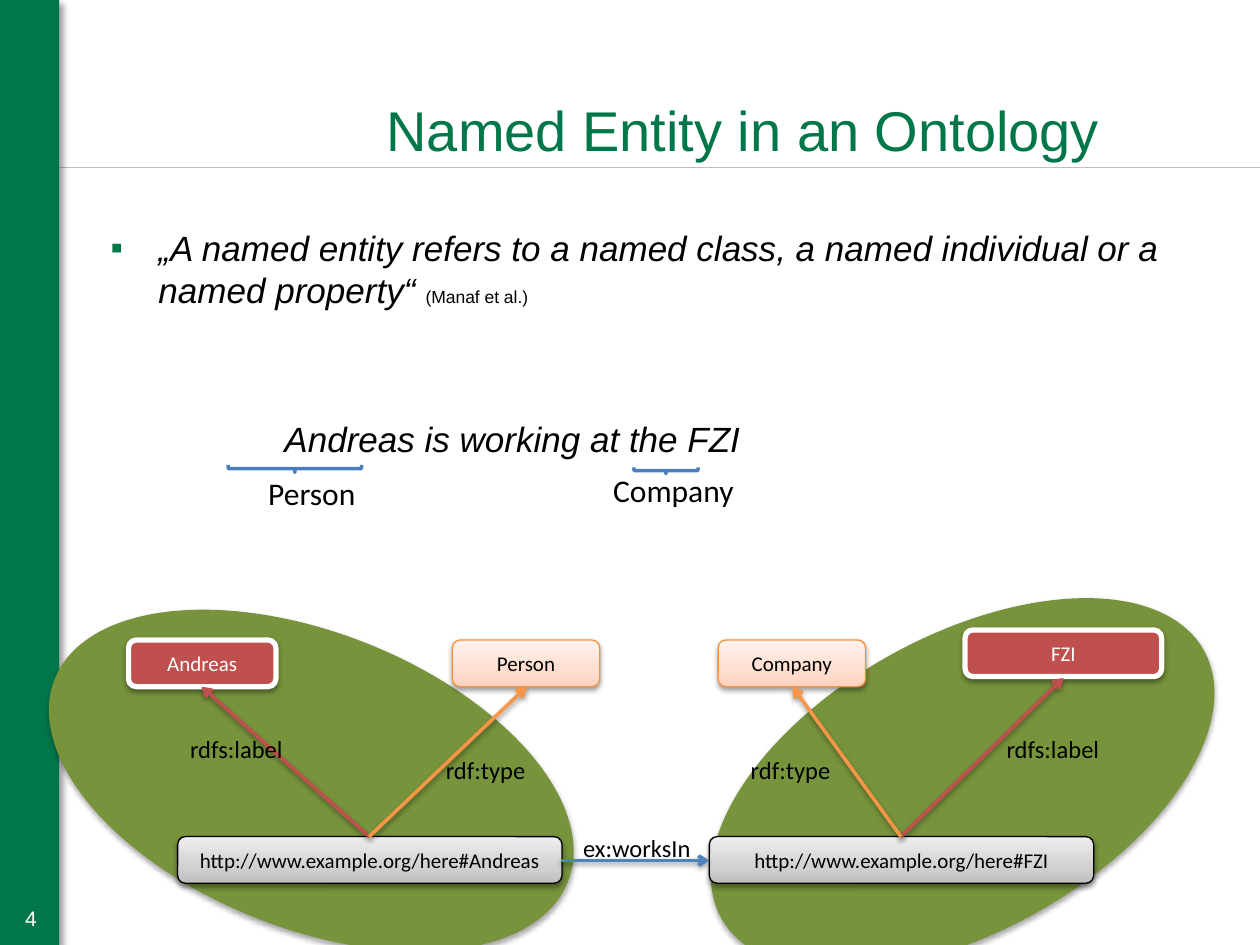
from copy import deepcopy
from lxml import etree
from pptx import Presentation, util as u
from pptx.dml.color import RGBColor
from pptx.enum import shapes as s, text as t
from pptx.oxml import ns

Inches, Pt = u.Inches, u.Pt
HUES = {"green": "007749", "olive": "77933C", "red": "C0504D", "amber": "F79646",
        "rim": "F69240", "blue": "4F81BD", "brace": "4B7EBC", "rule": "BFBFBF",
        "black": "000000", "white": "FFFFFF"}
GREY = ["BDBDBD", "D1D1D1", "EEEEEE"]
PEACH = ["FFD2BD", "FFDED0", "FFF2ED"]
SOFT = (38, 3.1, 1.6, 90)  # shadow: opacity %, blur pt, distance pt, angle
WIDE = (35, 3.1, 1.8, 90)

deck = Presentation()
deck.slide_width, deck.slide_height = Inches(10), Inches(7.5)
page = deck.slides.add_slide(deck.slide_layouts[6])
parts = page.shapes
RECT, ROUND = s.MSO_SHAPE.RECTANGLE, s.MSO_SHAPE.ROUNDED_RECTANGLE


def write(box, words, size, hue="black", face="Calibri", side="CENTER", anchor="MIDDLE", wrap=True):
    frame = box.text_frame
    for key, val in {"word_wrap": wrap, "vertical_anchor": t.MSO_ANCHOR[anchor]}.items():
        setattr(frame, key, val)
    para = frame.paragraphs[0]
    para.text, para.alignment = words, t.PP_ALIGN[side]
    for key, val in {"size": Pt(size), "name": face}.items():
        setattr(para.font, key, val)
    para.font.color.rgb = RGBColor.from_string(HUES[hue])


def dress(item, fill=None, line=None, width=0.75, glow=None, head=False):
    props = item._element.spPr
    if isinstance(fill, list):
        item.fill.gradient()
        stops = props.find(".//" + ns.qn("a:gsLst"))
        stops.insert(1, deepcopy(stops[0]))
        item.fill.gradient_angle = 90
        for stop, hue, place in zip(item.fill.gradient_stops, fill, (0, 0.35, 1)):
            stop.color.rgb, stop.position = RGBColor.from_string(hue), place
    elif fill:
        item.fill.solid()
        item.fill.fore_color.rgb = RGBColor.from_string(HUES[fill])
    elif hasattr(item, "fill"):
        item.fill.background()
    if line:
        item.line.color.rgb = RGBColor.from_string(HUES[line])
        item.line.width = Pt(width)
    else:
        item.line.fill.background()
    if head:
        etree.SubElement(item.line._get_or_add_ln(), ns.qn("a:tailEnd"), type="arrow")
    effect = etree.SubElement(props, ns.qn("a:effectLst"))
    if glow:
        alpha, blur, far, turn = glow
        shade = etree.SubElement(effect, ns.qn("a:outerShdw"), blurRad=str(Pt(blur)),
                                 dist=str(Pt(far)), dir=str(turn * 60000), rotWithShape="0")
        tone = etree.SubElement(shade, ns.qn("a:srgbClr"), val=HUES["black"])
        etree.SubElement(tone, ns.qn("a:alpha"), val=str(alpha * 1000))


# Title rule and side bar
rule = parts.add_connector(s.MSO_CONNECTOR.STRAIGHT, Inches(10), Inches(1.33), Inches(0), Inches(1.33))
dress(rule, line="rule")
bar = parts.add_shape(RECT, Inches(0), Inches(0), Inches(0.47), Inches(7.5))
dress(bar, "green", glow=(40, 4, 3, 45))

# Class names below the sentence
for name, left, top in [("Person", 1.74, 3.68), ("Company", 4.61, 3.66)]:
    tag = parts.add_shape(RECT, Inches(left), Inches(top), Inches(1.47), Inches(0.46))
    dress(tag, "white", "white")
    write(tag, name, 18)

# Quote and sample sentence
body = parts.add_textbox(Inches(0.78), Inches(1.75), Inches(8.67), Inches(5.2))
body.text_frame.word_wrap = True
quote = body.text_frame.paragraphs[0]
sample = body.text_frame.add_paragraph()
sample.space_before = Pt(61)
for para, left, hang in [(quote, 0.38, -0.38), (sample, 1.38, 0)]:
    rule = para._p.get_or_add_pPr()
    rule.set("marL", str(Inches(left)))
    rule.set("indent", str(Inches(hang)))
mark = quote._p.get_or_add_pPr()
tint = etree.SubElement(mark, ns.qn("a:buClr"))
etree.SubElement(tint, ns.qn("a:srgbClr"), val=HUES["green"])
etree.SubElement(mark, ns.qn("a:buFont"), typeface="Arial")
etree.SubElement(mark, ns.qn("a:buChar"), char="▪")
for para, words, size, slant in [
        (quote, "„A named entity refers to a named class, a named individual or a named property“ ", 20, True),
        (quote, "(Manaf et al.)", 10, False),
        (sample, "Andreas is working at the FZI", 20, True)]:
    run = para.add_run()
    run.text = words
    for key, val in {"size": Pt(size), "italic": slant, "name": "Arial"}.items():
        setattr(run.font, key, val)
    run.font.color.rgb = RGBColor.from_string(HUES["black"])

# Page number and title
count = parts.add_textbox(Inches(-0.28), Inches(7.09), Inches(0.67), Inches(0.39))
write(count, "4", 12, "white", "Arial", "RIGHT")
title = parts.add_textbox(Inches(0.7), Inches(0.31), Inches(8.13), Inches(1.03))
write(title, "Named Entity in an Ontology", 32, "green", "Arial", "RIGHT", "BOTTOM")

# Tilted ovals
for left, top, turn in [(0.28, 5.02, 21.5), (5.45, 5.05, 331)]:
    oval = parts.add_shape(s.MSO_SHAPE.OVAL, Inches(left), Inches(top), Inches(4.38), Inches(2.35))
    oval.rotation = turn
    dress(oval, "olive", glow=WIDE)

# Graph nodes
for words, left, top, wide, fill, line, width, hue in [
        ("http://www.example.org/here#Andreas", 1.41, 6.64, 3.05, GREY, "black", 0.75, "black"),
        ("http://www.example.org/here#FZI", 5.63, 6.64, 3.05, GREY, "black", 0.75, "black"),
        ("FZI", 7.66, 5, 1.56, "red", "white", 3, "white"),
        ("Andreas", 1.02, 5.08, 1.17, "red", "white", 3, "white"),
        ("Person", 3.59, 5.08, 1.17, PEACH, "rim", 0.75, "black"),
        ("Company", 5.7, 5.08, 1.17, PEACH, "rim", 0.75, "black")]:
    node = parts.add_shape(ROUND, Inches(left), Inches(top), Inches(wide), Inches(0.37))
    dress(node, fill, line, width, SOFT)
    write(node, words, 12, hue)

# Graph edges with their labels
for ends, hue, words, left, top, wide in [
        ((2.93, 6.64, 1.6, 5.45), "red", "rdfs:label", 1.41, 5.78, 0.95),
        ((7.15, 6.64, 8.44, 5.38), "red", "rdfs:label", 7.89, 5.78, 0.95),
        ((4.45, 6.83, 5.63, 6.83), "blue", "ex:worksIn", 4.53, 6.56, 1.06),
        ((7.15, 6.64, 6.29, 5.45), "amber", "rdf:type", 5.86, 5.94, 0.84),
        ((2.93, 6.64, 4.18, 5.45), "amber", "rdf:type", 3.44, 5.94, 0.84)]:
    edge = parts.add_connector(s.MSO_CONNECTOR.STRAIGHT, *map(Inches, ends))
    dress(edge, line=hue, width=2, glow=SOFT, head=True)
    label = parts.add_textbox(Inches(left), Inches(top), Inches(wide), Inches(0.34))
    write(label, words, 14, side="LEFT", anchor="TOP", wrap=False)

# Braces under the named entities
for left, top, wide, high in [(2.31, 3.19, 0.06, 1.06), (5.26, 3.48, 0.05, 0.51)]:
    brace = parts.add_shape(s.MSO_SHAPE.RIGHT_BRACE, Inches(left), Inches(top), Inches(wide), Inches(high))
    brace.rotation = 90
    dress(brace, line="brace", width=2)

deck.save("out.pptx")
